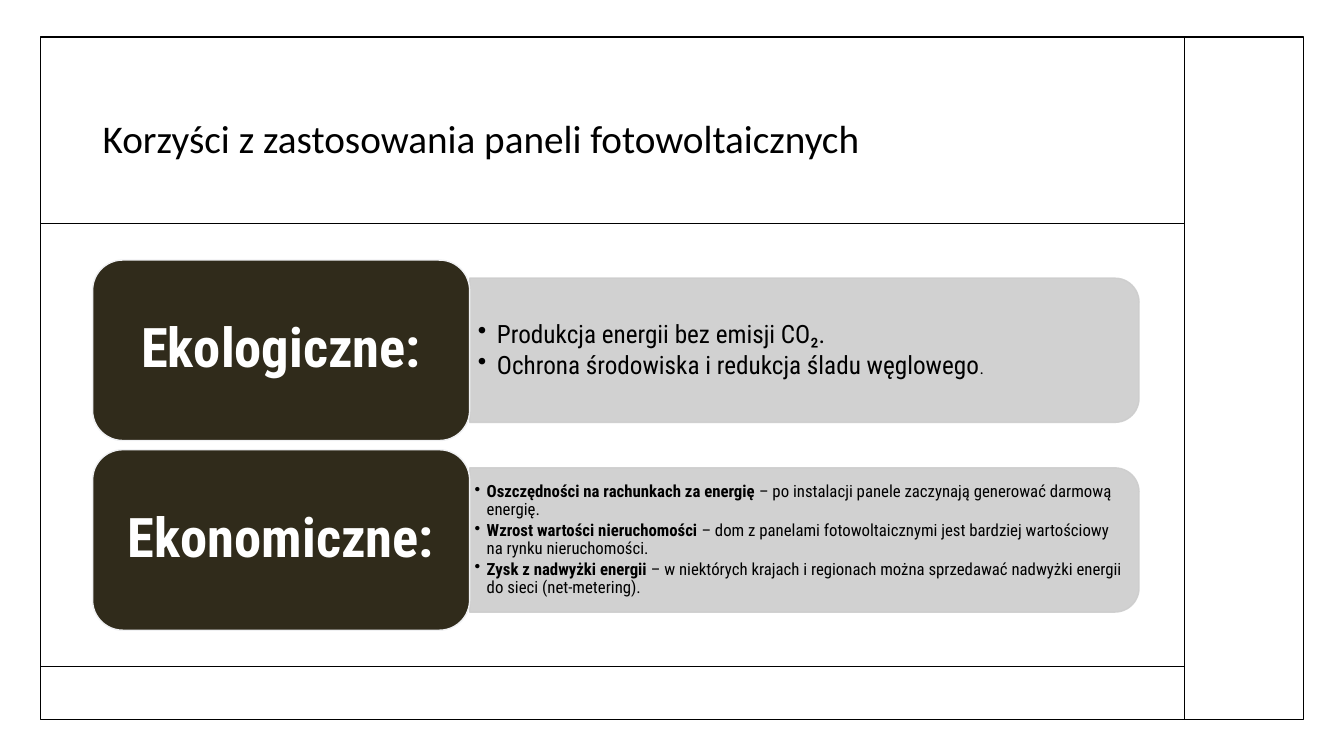
"""Build the slide on the benefits of photovoltaic panels."""
import pptx
import pptx.dml.color
import pptx.enum.shapes
import pptx.enum.text
import pptx.oxml
import pptx.oxml.ns
import pptx.util

Pt = pptx.util.Pt
RGB = pptx.dml.color.RGBColor
SHAPE = pptx.enum.shapes.MSO_SHAPE
ALIGN = pptx.enum.text.PP_ALIGN
MIDDLE = pptx.enum.text.MSO_ANCHOR.MIDDLE
qn = pptx.oxml.ns.qn

BLACK = RGB(0x00, 0x00, 0x00)
WHITE = RGB(0xFF, 0xFF, 0xFF)
GREY = RGB(0xCD, 0xCD, 0xCD)
BROWN = RGB(0x30, 0x2B, 0x1B)
PALE = RGB(0xF0, 0xF1, 0xF3)
FONT = "Roboto Condensed"


def add_run(para, text, size, color, bold=False, font=FONT):
    run = para.add_run()
    run.text = text
    run.font.name = font
    run.font.size = Pt(size)
    run.font.bold = bold
    run.font.color.rgb = color
    para.line_spacing = 0.9


def set_frame(frame, side, top):
    frame.word_wrap = True
    frame.vertical_anchor = MIDDLE
    frame.margin_left = frame.margin_right = Pt(side)
    frame.margin_top = frame.margin_bottom = Pt(top)


deck = pptx.Presentation()
deck.slide_width = Pt(960)
deck.slide_height = Pt(540)
slide = deck.slides.add_slide(deck.slide_layouts[5])
shapes = slide.shapes

border = shapes.add_shape(SHAPE.RECTANGLE, Pt(28.8), Pt(26.6), Pt(902.2), Pt(487.4))
border.shadow.inherit = False
border.fill.background()
border.line.color.rgb = BLACK
border.line.width = Pt(1)

title = shapes.title
title.left, title.top, title.width, title.height = Pt(66.2), Pt(64), Pt(747.4), Pt(73.4)
title.text_frame.vertical_anchor = MIDDLE
head = title.text_frame.paragraphs[0]
head.alignment = ALIGN.LEFT
add_run(head, "Korzyści z zastosowania paneli fotowoltaicznych", 28, BLACK, font="Calibri")

for x1, y1, x2, y2 in [
    (28.8, 159.8, 846, 159.8),
    (28.8, 475.9, 846, 475.9),
    (846, 26.6, 846, 514),
]:
    rule = shapes.add_connector(
        pptx.enum.shapes.MSO_CONNECTOR.STRAIGHT, Pt(x1), Pt(y1), Pt(x2), Pt(y2))
    rule.line.color.rgb = BLACK
    rule.line.width = Pt(1)
    rule._element.spPr.append(pptx.oxml.parse_xml(
        f'<a:effectLst {pptx.oxml.ns.nsdecls("a")}/>'))

ROWS = [
    ("Ekologiczne:", 18, 13.7, (5.8, 2.9), [
        [("Produkcja energii bez emisji CO₂.", 18, False)],
        [("Ochrona środowiska i redukcja śladu węglowego", 18, False), (".", 12, False)],
    ]),
    ("Ekonomiczne:", 12, 8.6, (3.6, 2.2), [
        [("Oszczędności na rachunkach za energię", 12, True),
         (" – po instalacji panele zaczynają generować darmową energię.", 12, False)],
        [("Wzrost wartości nieruchomości", 12, True),
         (" – dom z panelami fotowoltaicznymi jest bardziej wartościowy na rynku"
          " nieruchomości.", 12, False)],
        [("Zysk z nadwyżki energii", 12, True),
         (" – w niektórych krajach i regionach można sprzedawać nadwyżki energii"
          " do sieci (net-metering).", 12, False)],
    ]),
]
LEFT, WIDE, HIGH = 66.2, 269.3, 128.9
LONG, THICK = 478.1, 103
EDGE = LEFT + WIDE

for row, (name, size, indent, inset, points) in enumerate(ROWS):
    mid = 250.2 + row * 135.5

    bar = shapes.add_shape(
        SHAPE.ROUND_2_SAME_RECTANGLE, Pt(EDGE + (LONG - THICK) / 2), Pt(mid - LONG / 2),
        Pt(THICK), Pt(LONG))
    bar.rotation = 90
    bar.shadow.inherit = False
    bar.fill.solid()
    bar.fill.fore_color.rgb = GREY
    bar.line.color.rgb = GREY
    bar.line.width = Pt(1)
    for color in bar._element.spPr.iter(qn("a:srgbClr")):
        color.append(pptx.oxml.parse_xml(
            f'<a:alpha {pptx.oxml.ns.nsdecls("a")} val="90000"/>'))

    body = shapes.add_textbox(Pt(EDGE), Pt(mid - 46.4), Pt(473), Pt(92.9)).text_frame
    set_frame(body, *inset)
    for index, runs in enumerate(points):
        para = body.add_paragraph() if index else body.paragraphs[0]
        para.level = 1
        para.space_after = Pt(size * 0.15)
        for text, points_high, bold in runs:
            add_run(para, text, points_high, BLACK, bold)
        props = para._p.get_or_add_pPr()
        props.set("marL", str(Pt(indent)))
        props.set("indent", str(-Pt(indent)))
        props.append(pptx.oxml.parse_xml(
            f'<a:buChar {pptx.oxml.ns.nsdecls("a")} char="•"/>'))

    label = shapes.add_shape(
        SHAPE.ROUNDED_RECTANGLE, Pt(LEFT), Pt(mid - HIGH / 2), Pt(WIDE), Pt(HIGH))
    label.shadow.inherit = False
    label.fill.solid()
    label.fill.fore_color.rgb = BROWN
    label.line.color.rgb = PALE
    label.line.width = Pt(1)
    set_frame(label.text_frame, 11.5, 5.8)
    para = label.text_frame.paragraphs[0]
    para.alignment = ALIGN.CENTER
    add_run(para, name, 39, WHITE, True)

deck.save("out.pptx")
